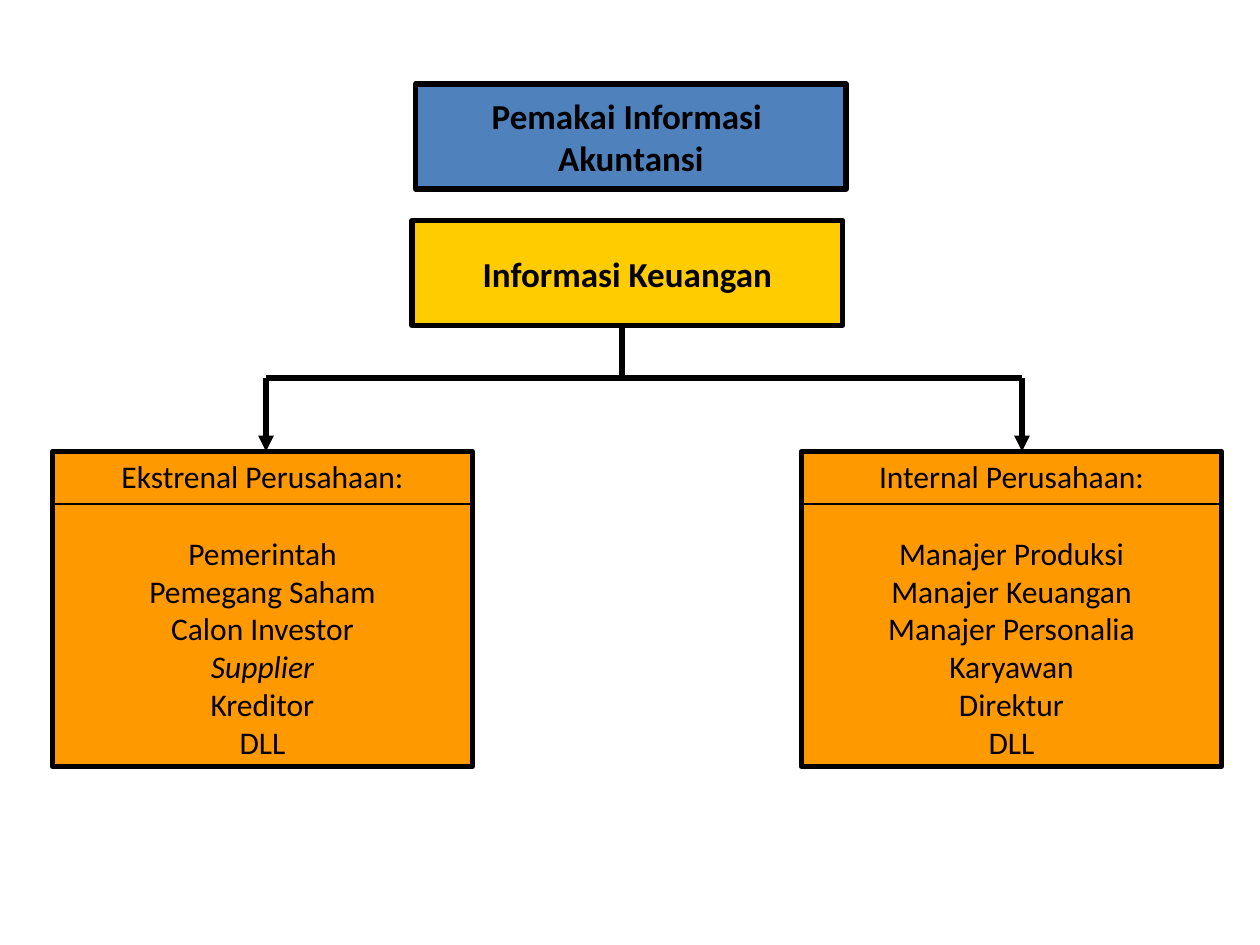
from lxml import etree
from pptx import Presentation
from pptx.dml.color import RGBColor
from pptx.enum import shapes, text
from pptx.oxml import ns
from pptx.util import Pt

BLACK = "000000"


def color(value):
    return RGBColor.from_string(value)


def add_line(x1, y1, x2, y2, width=3, arrow=False):
    line = page.shapes.add_connector(
        shapes.MSO_CONNECTOR.STRAIGHT, Pt(x1), Pt(y1), Pt(x2), Pt(y2))
    line.line.color.rgb = color(BLACK)
    line.line.width = Pt(width)
    if arrow:
        stroke = line.line._get_or_add_ln()
        etree.SubElement(stroke, ns.qn("a:tailEnd"), type="triangle")
    etree.SubElement(line._element.spPr, ns.qn("a:effectLst"))


deck = Presentation()
deck.slide_width, deck.slide_height = Pt(720), Pt(540)
page = deck.slides.add_slide(deck.slide_layouts[6])

# Layout
bar_y, group_y, divider_y = 216, 258, 288
external_x, internal_x, group_width = 30, 458, 240
arrow_xs = (152, 584)
stem_x = 355.5

# Boxes: left, top, width, height, fill, size, bold, gap after first line, lines
boxes = [
    (237.5, 48, 246, 60, "4F81BD", 20, True, 0,
     ["Pemakai Informasi ", "Akuntansi"]),
    (235.5, 126, 246, 60, "FFCC00", 20, True, 0, ["Informasi Keuangan"]),
    (external_x, group_y, group_width, 180, "FF9900", 18, False, 22,
     ["Ekstrenal Perusahaan:", "Pemerintah", "Pemegang Saham",
      "Calon Investor", "Supplier", "Kreditor", "DLL"]),
    (internal_x, group_y, group_width, 180, "FF9900", 18, False, 22,
     ["Internal Perusahaan:", "Manajer Produksi", "Manajer Keuangan",
      "Manajer Personalia", "Karyawan", "Direktur", "DLL"]),
]
for left, top, width, height, fill, size, bold, gap, lines in boxes:
    box = page.shapes.add_shape(
        shapes.MSO_SHAPE.RECTANGLE, Pt(left), Pt(top), Pt(width), Pt(height))
    box.shadow.inherit = False
    box.fill.solid()
    box.fill.fore_color.rgb = color(fill)
    box.line.color.rgb = color(BLACK)
    box.line.width = Pt(3)
    frame = box.text_frame
    frame.word_wrap = False
    frame.vertical_anchor = text.MSO_ANCHOR.MIDDLE
    for index, line_text in enumerate(lines):
        para = frame.add_paragraph() if index else frame.paragraphs[0]
        para.alignment = text.PP_ALIGN.CENTER
        if gap and index == 0:
            para.space_after = Pt(gap)
        span = para.add_run()
        span.text = line_text
        span.font.name = "Calibri"
        span.font.size = Pt(size)
        span.font.bold = bold
        span.font.italic = line_text == "Supplier"
        span.font.color.rgb = color(BLACK)

# Stem, crossbar and arrows down to the two groups
add_line(stem_x, 186, stem_x, bar_y)
add_line(arrow_xs[0], bar_y, arrow_xs[1], bar_y)
for x in arrow_xs:
    add_line(x, bar_y, x, group_y, arrow=True)

# Dividers under the group headings
for x in (external_x, internal_x):
    add_line(x, divider_y, x + group_width, divider_y, width=0.75)

deck.save("out.pptx")
